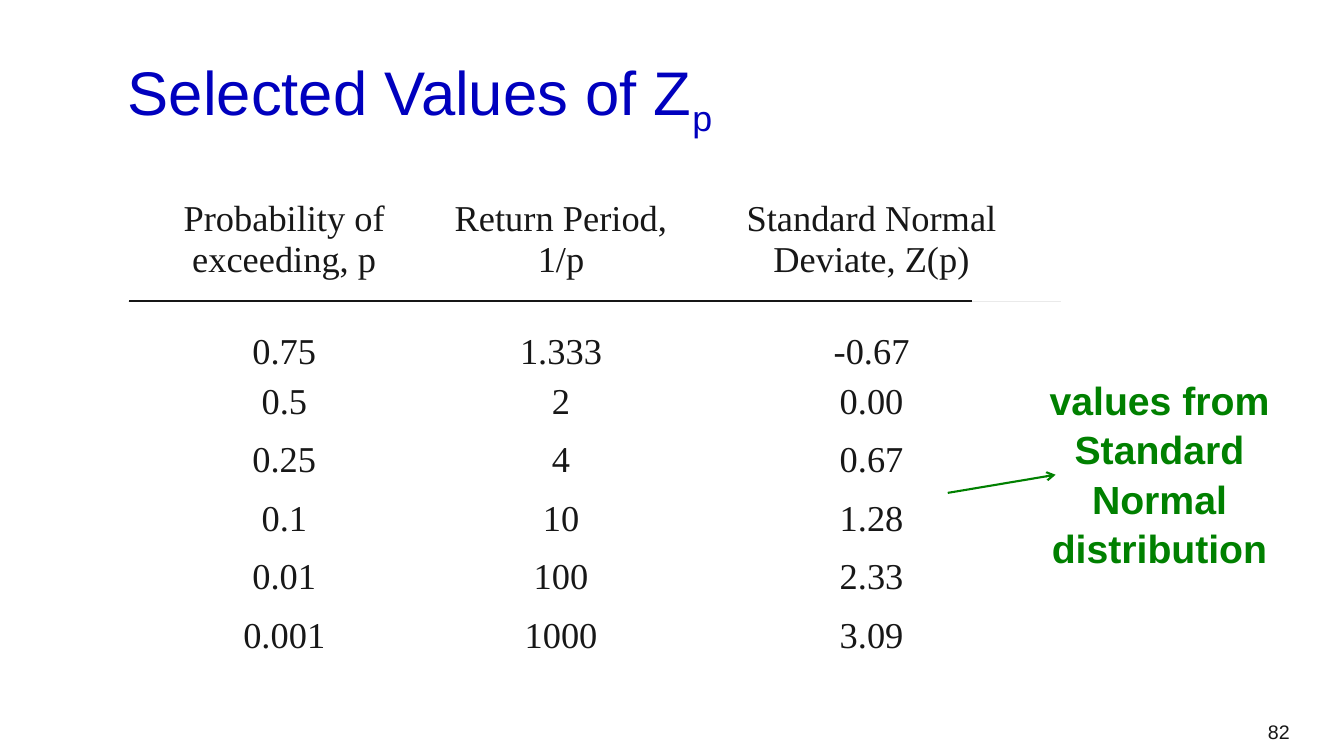
from dataclasses import dataclass
from typing import Any

import pptx
import pptx.dml.color
import pptx.enum.dml
import pptx.enum.shapes
import pptx.enum.text
import pptx.oxml
import pptx.oxml.ns
import pptx.util

Inches = pptx.util.Inches
Pt = pptx.util.Pt
RGBColor = pptx.dml.color.RGBColor
ALIGN = pptx.enum.text.PP_ALIGN
ANCHOR = pptx.enum.text.MSO_ANCHOR
AUTO_SIZE = pptx.enum.text.MSO_AUTO_SIZE

INK = RGBColor(0x17, 0x17, 0x17)
TITLE_BLUE = RGBColor(0x00, 0x00, 0xBE)
NOTE_GREEN = RGBColor(0x00, 0x80, 0x00)
RULE_GRAY = RGBColor(0xEA, 0xEA, 0xEA)

COLUMN_WIDTHS = (3.08, 2.41, 3.75)
ROW_HEIGHTS = (1.06, 0.75) + (0.58,) * 5
DEVIATES = (
    ("Probability of exceeding, p", "Return Period, 1/p", "Standard Normal Deviate, Z(p)"),
    ("0.75", "1.333", "-0.67"),
    ("0.5", "2", "0.00"),
    ("0.25", "4", "0.67"),
    ("0.1", "10", "1.28"),
    ("0.01", "100", "2.33"),
    ("0.001", "1000", "3.09"),
)


@dataclass(frozen=True)
class Label:
    runs: tuple[str, ...]
    box: tuple[float, float, float, float]
    color: RGBColor
    font: dict[str, Any]
    paragraph: dict[str, Any]
    frame: dict[str, Any]


@dataclass(frozen=True)
class Stroke:
    start: tuple[float, float]
    end: tuple[float, float]
    color: RGBColor
    arrow: bool = False


LABELS = (
    Label(("Selected Values of Z", "p"), (1.17, 0.33, 10.16, 1.25), TITLE_BLUE,
          {"name": "Arial", "size": Pt(44)}, {"alignment": ALIGN.LEFT},
          {"vertical_anchor": ANCHOR.MIDDLE}),
    Label(("values from Standard Normal distribution",), (10.11, 3.66, 2.78, 1.99), NOTE_GREEN,
          {"name": "Arial", "size": Pt(28), "bold": True},
          {"alignment": ALIGN.CENTER, "line_spacing": 1.05},
          {"auto_size": AUTO_SIZE.SHAPE_TO_FIT_TEXT}),
    Label(("82",), (10.11, 6.92, 2.78, 0.5), INK,
          {"name": "Arial", "size": Pt(14)}, {"alignment": ALIGN.RIGHT},
          {"vertical_anchor": ANCHOR.BOTTOM}),
)
STROKES = (
    Stroke((1.28, 2.99), (9.64, 2.99), INK),
    Stroke((9.4, 4.89), (10.47, 4.71), NOTE_GREEN, arrow=True),
)


def apply_format(target: Any, values: dict[str, Any]) -> None:
    for attribute, value in values.items():
        setattr(target, attribute, value)


def add_run(paragraph: Any, text: str, font: dict[str, Any], color: RGBColor) -> Any:
    run = paragraph.add_run()
    run.text = text
    apply_format(run.font, font)
    run.font.color.rgb = color
    return run


def add_label(slide: Any, label: Label) -> None:
    frame = slide.shapes.add_textbox(*map(Inches, label.box)).text_frame
    apply_format(frame, {"word_wrap": True, **label.frame})
    paragraph = frame.paragraphs[0]
    apply_format(paragraph, label.paragraph)
    base, *subscripts = label.runs
    add_run(paragraph, base, label.font, label.color)
    for subscript in subscripts:
        run = add_run(paragraph, subscript, label.font, label.color)
        run.font._element.set("baseline", "-25000")


def add_stroke(slide: Any, stroke: Stroke) -> None:
    connector = slide.shapes.add_connector(
        pptx.enum.shapes.MSO_CONNECTOR.STRAIGHT,
        *map(Inches, stroke.start + stroke.end))
    connector.line.color.rgb = stroke.color
    connector.line.width = Pt(1.5)
    properties = connector._element.spPr
    if stroke.arrow:
        tail = pptx.oxml.parse_xml(
            f'<a:tailEnd {pptx.oxml.ns.nsdecls("a")} type="arrow"/>')
        connector.line._get_or_add_ln().append(tail)
    properties.append(pptx.oxml.parse_xml(
        f'<a:effectLst {pptx.oxml.ns.nsdecls("a")}/>'))


def add_border(cell: Any, side: str) -> None:
    border = pptx.oxml.parse_xml(
        f'<a:{side} {pptx.oxml.ns.nsdecls("a")} w="{Pt(1)}">'
        f'<a:solidFill><a:srgbClr val="{RULE_GRAY}"/></a:solidFill></a:{side}>')
    cell._tc.get_or_add_tcPr().insert(0, border)


def add_deviate_table(slide: Any) -> None:
    table = slide.shapes.add_table(
        len(ROW_HEIGHTS), len(COLUMN_WIDTHS), Inches(1.28), Inches(1.93),
        Inches(sum(COLUMN_WIDTHS)), Inches(sum(ROW_HEIGHTS))).table
    apply_format(table, {"first_row": False, "horz_banding": False})
    for column, width in zip(table.columns, COLUMN_WIDTHS):
        column.width = Inches(width)
    for row_index, (row, height, values) in enumerate(zip(table.rows, ROW_HEIGHTS, DEVIATES)):
        row.height = Inches(height)
        for cell, value in zip(row.cells, values):
            cell.fill.background()
            cell.vertical_anchor = ANCHOR.BOTTOM if row_index == 1 else ANCHOR.TOP
            if row_index < 2:
                add_border(cell, ("lnB", "lnT")[row_index])
            paragraph = cell.text_frame.paragraphs[0]
            paragraph.alignment = ALIGN.CENTER
            add_run(paragraph, value, {"name": "Times New Roman", "size": Pt(26)}, INK)


def main() -> None:
    presentation = pptx.Presentation()
    apply_format(presentation, {"slide_width": Inches(13.33), "slide_height": Inches(7.5)})
    slide = presentation.slides.add_slide(presentation.slide_layouts[6])
    add_deviate_table(slide)
    for label in LABELS:
        add_label(slide, label)
    for stroke in STROKES:
        add_stroke(slide, stroke)
    presentation.save("out.pptx")


if __name__ == "__main__":
    main()
